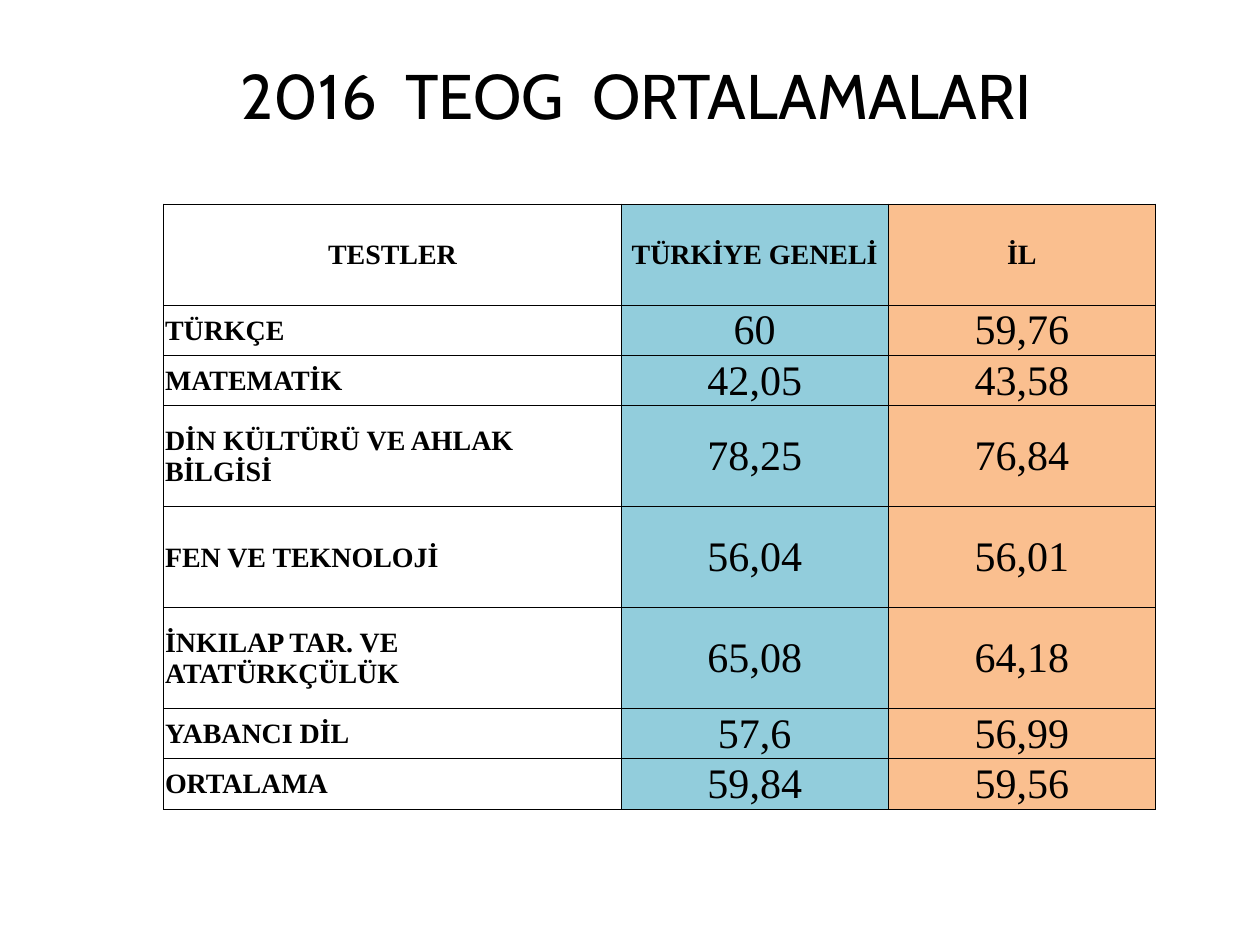
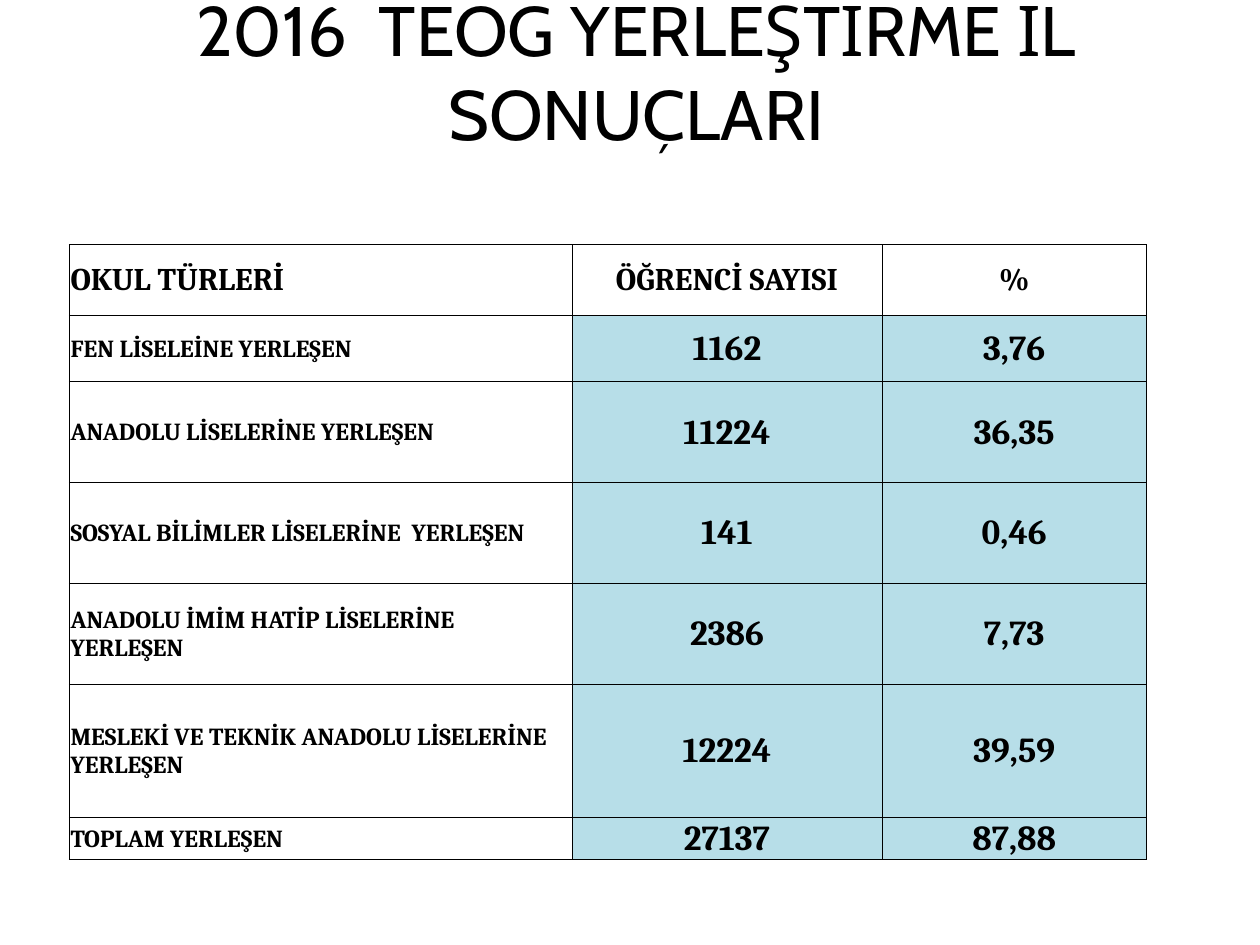
from lxml import etree
from pptx import Presentation
from pptx.dml.color import RGBColor
from pptx.enum.text import MSO_ANCHOR, MSO_AUTO_SIZE, PP_ALIGN
from pptx.oxml.ns import qn
from pptx.util import Inches, Pt

LEFT, CENTER = PP_ALIGN.LEFT, PP_ALIGN.CENTER
MIDDLE, BOTTOM = MSO_ANCHOR.MIDDLE, MSO_ANCHOR.BOTTOM
NO_AUTOFIT = MSO_AUTO_SIZE.NONE
TITLE_ONLY = 5

COLORS = {
    "text": "000000",
    "border": "000000",
    "country": "92CDDC",
    "province": "FABF8F",
    "placement": "B7DEE8",
}
TITLE_FONT = "Cabin"
BORDER_WIDTH = Pt(0.5)
CELL_FORMAT = {
    "vertical_anchor": MIDDLE,
    "margin_left": Inches(0.01),
    "margin_top": Inches(0.01),
    "margin_right": Inches(0.01),
    "margin_bottom": 0,
}

TEST_AVERAGES = [
    ("TESTLER", "TÜRKİYE GENELİ", "İL"),
    ("TÜRKÇE", "60", "59,76"),
    ("MATEMATİK", "42,05", "43,58"),
    ("DİN KÜLTÜRÜ VE AHLAK BİLGİSİ", "78,25", "76,84"),
    ("FEN VE TEKNOLOJİ", "56,04", "56,01"),
    ("İNKILAP TAR. VE ATATÜRKÇÜLÜK", "65,08", "64,18"),
    ("YABANCI DİL", "57,6", "56,99"),
    ("ORTALAMA", "59,84", "59,56"),
]
PLACEMENTS = [
    ("OKUL TÜRLERİ", "ÖĞRENCİ SAYISI", "%"),
    ("FEN LİSELEİNE YERLEŞEN", "1162", "3,76"),
    ("ANADOLU LİSELERİNE YERLEŞEN", "11224", "36,35"),
    ("SOSYAL BİLİMLER LİSELERİNE  YERLEŞEN", "141", "0,46"),
    ("ANADOLU İMİM HATİP LİSELERİNE  YERLEŞEN", "2386", "7,73"),
    ("MESLEKİ VE TEKNİK ANADOLU LİSELERİNE  YERLEŞEN", "12224", "39,59"),
    ("TOPLAM YERLEŞEN", "27137", "87,88"),
]


def set_attributes(target, values):
    for name, value in values.items():
        setattr(target, name, value)


def write_text(frame, text, align, font, size, bold=False):
    para = frame.paragraphs[0]
    para.alignment = align
    span = para.add_run()
    span.text = text
    set_attributes(span.font, {"name": font, "size": Pt(size), "bold": bold})
    span.font.color.rgb = RGBColor.from_string(COLORS["text"])


def add_titled_slide(deck, text, top, size, frame_format):
    page = deck.slides.add_slide(deck.slide_layouts[TITLE_ONLY])
    title = page.shapes.title
    set_attributes(title, {"left": Inches(0.55), "top": Inches(top),
                           "width": Inches(9), "height": Inches(0.71)})
    set_attributes(title.text_frame,
                   {"word_wrap": True, "auto_size": NO_AUTOFIT, **frame_format})
    write_text(title.text_frame, text, CENTER, TITLE_FONT, size)
    return page


def add_borders(cell):
    properties = cell._tc.get_or_add_tcPr()
    for side in ("lnL", "lnR", "lnT", "lnB"):
        line = etree.SubElement(properties, qn(f"a:{side}"), w=str(BORDER_WIDTH))
        fill = etree.SubElement(line, qn("a:solidFill"))
        etree.SubElement(fill, qn("a:srgbClr"), val=COLORS["border"])


def fill_cell(cell, color):
    if color is None:
        cell.fill.background()
    else:
        cell.fill.solid()
        cell.fill.fore_color.rgb = RGBColor.from_string(COLORS[color])


def add_grid(page, rows, left, top, widths, heights, style_cell):
    """Add a bordered table; style_cell(row, column) gives (text format, fill)."""
    frame = page.shapes.add_table(len(rows), len(widths), Inches(left), Inches(top),
                                  Inches(sum(widths)), Inches(sum(heights)))
    table = frame.table
    set_attributes(table, {"first_row": False, "horz_banding": False})
    for column, width in zip(table.columns, widths):
        column.width = Inches(width)
    for row, height in zip(table.rows, heights):
        row.height = Inches(height)
    for row_index, texts in enumerate(rows):
        for column_index, text in enumerate(texts):
            cell = table.cell(row_index, column_index)
            text_format, color = style_cell(row_index, column_index)
            set_attributes(cell, CELL_FORMAT)
            add_borders(cell)
            fill_cell(cell, color)
            write_text(cell.text_frame, text, **text_format)


def style_average(row, column):
    is_value = row > 0 and column > 0
    text_format = {
        "font": "Times New Roman",
        "size": 24 if is_value else 16,
        "bold": not is_value,
        "align": LEFT if row > 0 and column == 0 else CENTER,
    }
    return text_format, (None, "country", "province")[column]


def style_placement(row, column):
    is_value = row > 0 and column > 0
    label_size = 18 if row == 0 else 14
    text_format = {
        "font": "Cambria",
        "size": 20 if is_value else label_size,
        "bold": True,
        "align": LEFT if column == 0 else CENTER,
    }
    return text_format, "placement" if is_value else None


def main():
    deck = Presentation()
    deck.slide_width, deck.slide_height = Inches(10), Inches(7.5)

    averages = add_titled_slide(deck, "2016  TEOG  ORTALAMALARI", 0.39, 36,
                                {"vertical_anchor": MIDDLE})
    add_grid(averages, TEST_AVERAGES, 1.3, 1.62, [3.63, 2.12, 2.12],
             [0.8, 0.4, 0.4, 0.8, 0.8, 0.8, 0.4, 0.4], style_average)

    placements = add_titled_slide(
        deck, "2016  TEOG YERLEŞTİRME İL SONUÇLARI", 0.52, 40,
        {"vertical_anchor": BOTTOM, "margin_left": 0, "margin_top": Inches(0.05),
         "margin_right": 0, "margin_bottom": 0})
    add_grid(placements, PLACEMENTS, 0.55, 1.94, [3.99, 2.46, 2.1],
             [0.56, 0.53, 0.8, 0.8, 0.8, 1.06, 0.33], style_placement)

    deck.save("out.pptx")


if __name__ == "__main__":
    main()
